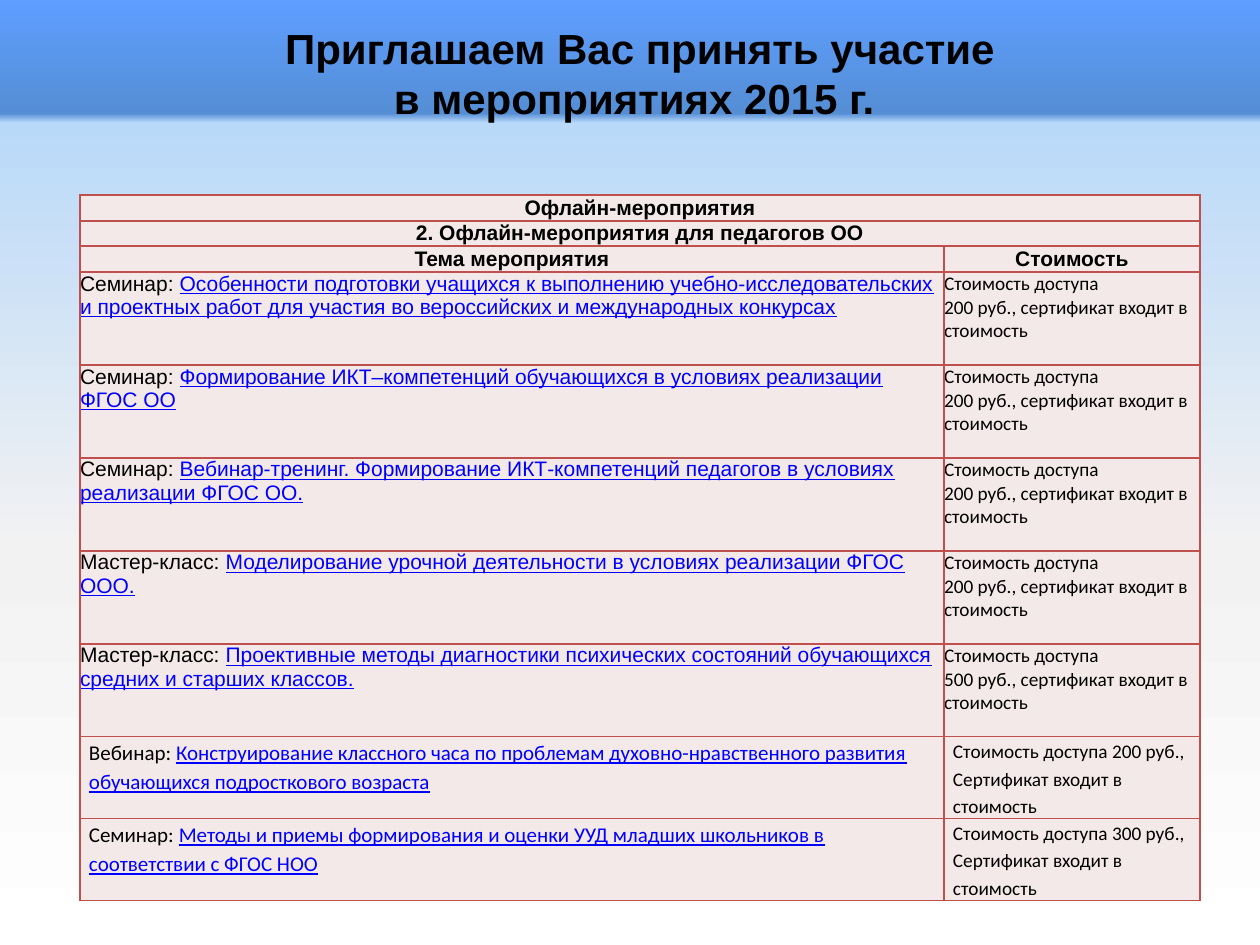
from dataclasses import dataclass

from lxml import etree
from pptx import Presentation
from pptx.dml.color import RGBColor
from pptx.enum.text import MSO_ANCHOR, MSO_AUTO_SIZE, PP_ALIGN
from pptx.oxml.ns import qn
from pptx.util import Pt

CENTER, LEFT = PP_ALIGN.CENTER, PP_ALIGN.LEFT
TOP, MIDDLE = MSO_ANCHOR.TOP, MSO_ANCHOR.MIDDLE
NO_AUTOFIT = MSO_AUTO_SIZE.NONE
EMU_PER_PX = 914400 / 126
TITLE_ONLY = 5


@dataclass(frozen=True)
class Theme:
    ink: str = "000000"
    link: str = "0000FF"
    cell: str = "F4E9E9"
    border: str = "C0504D"
    backdrop: tuple = ((0, "5E9EFF"), (12, "558ED5"), (13, "B9D9F9"),
                       (58, "F2F2F2"), (100, "FFFFFF"))
    heading_font: str = "Arial"
    body_font: str = "Calibri"
    title_size: int = 24
    topic_size: int = 12
    price_size: int = 11


def px(length):
    return round(length * EMU_PER_PX)


class SlideBuilder:
    def __init__(self, slide, theme):
        self.slide = slide
        self.theme = theme

    def background(self):
        fill = self.slide.background.fill
        fill.gradient()
        fill.gradient_angle = 270
        stops = self.slide.element.find(".//" + qn("a:gsLst"))
        for stop in list(stops):
            stops.remove(stop)
        for percent, color in self.theme.backdrop:
            stop = etree.SubElement(stops, qn("a:gs"), pos=str(percent * 1000))
            etree.SubElement(stop, qn("a:srgbClr"), val=color)

    def style(self, paragraph, size, face, bold=False, align=LEFT, spacing=None):
        paragraph.alignment = align
        paragraph.line_spacing = spacing
        font = paragraph.font
        font.size, font.name, font.bold = Pt(size), face, bold
        font.color.rgb = RGBColor.from_string(self.theme.ink)

    def title(self, lines, left, top, width, height):
        heading = self.slide.shapes.title
        heading.left, heading.top = px(left), px(top)
        heading.width, heading.height = px(width), px(height)
        frame = heading.text_frame
        frame.text = "\n".join(lines)
        frame.word_wrap = True
        frame.auto_size = NO_AUTOFIT
        frame.vertical_anchor = TOP
        for paragraph in frame.paragraphs:
            self.style(paragraph, self.theme.title_size, self.theme.heading_font, True, CENTER)

    def table(self, left, top, columns, rows):
        grid = self.slide.shapes.add_table(
            len(rows), len(columns), px(left), px(top), px(sum(columns)), px(sum(rows))).table
        grid.first_row = grid.horz_banding = False
        for column, width in zip(grid.columns, columns):
            column.width = px(width)
        for row, height in zip(grid.rows, rows):
            row.height = px(height)
        for cell in grid.iter_cells():
            self.cell_frame(cell)
        return grid

    def cell_frame(self, cell):
        properties = cell._tc.get_or_add_tcPr()
        for side in ("lnL", "lnR", "lnT", "lnB"):
            line = etree.SubElement(properties, qn("a:" + side), w=str(Pt(1)))
            paint = etree.SubElement(line, qn("a:solidFill"))
            etree.SubElement(paint, qn("a:srgbClr"), val=self.theme.border)
        cell.fill.solid()
        cell.fill.fore_color.rgb = RGBColor.from_string(self.theme.cell)
        cell.margin_left = cell.margin_right = cell.margin_top = cell.margin_bottom = 0

    def header(self, cell, text):
        cell.text = text
        cell.vertical_anchor = MIDDLE
        self.style(cell.text_frame.paragraphs[0], self.theme.topic_size,
                   self.theme.heading_font, True, CENTER)

    def topic(self, cell, kind, subject, face, inset, spacing):
        cell.margin_left = cell.margin_right = px(inset)
        paragraph = cell.text_frame.paragraphs[0]
        self.style(paragraph, self.theme.topic_size, face, spacing=spacing)
        paragraph.add_run().text = kind + ": "
        linked = paragraph.add_run()
        linked.text = subject
        linked.font.underline = True
        linked.font.color.rgb = RGBColor.from_string(self.theme.link)

    def price(self, cell, text, inset, spacing):
        cell.margin_left = cell.margin_right = px(inset)
        cell.text = text
        self.style(cell.text_frame.paragraphs[0], self.theme.price_size,
                   self.theme.body_font, spacing=spacing)


SEMINARS = [
    ("Семинар", "Особенности подготовки учащихся к выполнению учебно-исследовательских "
     "и проектных работ для участия во вероссийских и международных конкурсах", 200),
    ("Семинар", "Формирование ИКТ–компетенций обучающихся в условиях реализации ФГОС ОО", 200),
    ("Семинар", "Вебинар-тренинг. Формирование ИКТ-компетенций педагогов в условиях "
     "реализации ФГОС ОО.", 200),
    ("Мастер-класс", "Моделирование урочной деятельности в условиях реализации ФГОС ООО.", 200),
    ("Мастер-класс", "Проективные методы диагностики психических состояний обучающихся "
     "средних и старших классов.", 500),
]
EXTRA_EVENTS = [
    ("Вебинар", "Конструирование классного часа по проблемам духовно-нравственного развития "
     "обучающихся подросткового возраста", 200),
    ("Семинар", "Методы и приемы формирования и оценки УУД младших школьников в "
     "соответствии с ФГОС НОО", 300),
]
SEMINAR_PRICE = "Стоимость доступа\v{} руб., сертификат входит в стоимость"
EXTRA_PRICE = "Стоимость доступа {} руб., Сертификат входит в стоимость"
BANNERS = ["Офлайн-мероприятия", "2. Офлайн-мероприятия для педагогов ОО"]
COLUMN_HEADS = ["Тема мероприятия", "Стоимость"]


def main():
    deck = Presentation()
    deck.slide_width, deck.slide_height = px(1260), px(945)
    theme = Theme()
    builder = SlideBuilder(deck.slides.add_slide(deck.slide_layouts[TITLE_ONLY]), theme)
    builder.background()
    builder.title(["Приглашаем Вас принять участие", "в мероприятиях 2015 г. "],
                  174, 16, 932, 115)

    heights = [26, 25, 26] + [93] * len(SEMINARS) + [79] * len(EXTRA_EVENTS)
    events = builder.table(80, 195, [864, 256], heights)
    for row, banner in enumerate(BANNERS):
        events.cell(row, 0).merge(events.cell(row, 1))
        builder.header(events.cell(row, 0), banner)
    for column, head in enumerate(COLUMN_HEADS):
        builder.header(events.cell(len(BANNERS), column), head)

    row = len(BANNERS) + 1
    groups = [(SEMINARS, SEMINAR_PRICE, theme.heading_font, 0, None),
              (EXTRA_EVENTS, EXTRA_PRICE, theme.body_font, 9, 1.15)]
    for group, price_text, face, inset, spacing in groups:
        for kind, subject, roubles in group:
            builder.topic(events.cell(row, 0), kind, subject, face, inset, spacing)
            builder.price(events.cell(row, 1), price_text.format(roubles), inset, spacing)
            row += 1
    deck.save("out.pptx")


if __name__ == "__main__":
    main()
